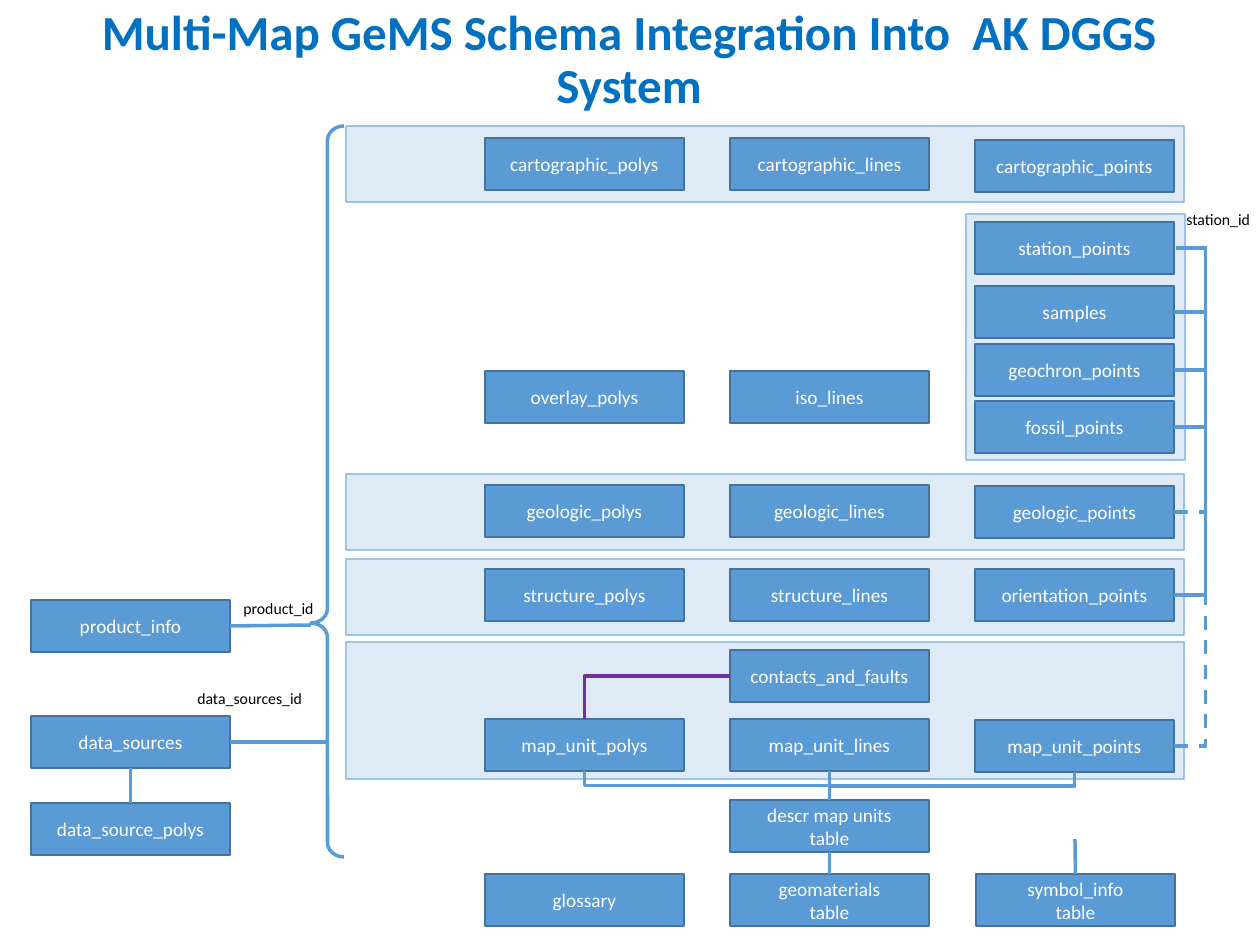
from dataclasses import dataclass

from lxml.etree import SubElement
from pptx import Presentation
from pptx.dml.color import RGBColor
from pptx.enum.dml import MSO_LINE
from pptx.enum.shapes import MSO_CONNECTOR, MSO_SHAPE
from pptx.enum.text import MSO_ANCHOR, MSO_AUTO_SIZE, PP_ALIGN
from pptx.oxml.ns import qn
from pptx.util import Emu, Pt


@dataclass(frozen=True)
class Theme:
    font: str = "Calibri"
    title: str = "0070C0"
    box: str = "5B9BD5"
    box_edge: str = "43739E"
    panel: str = "DEEBF7"
    panel_edge: str = "9DC3E6"
    link: str = "5B9BD5"
    fault: str = "7030A0"
    light: str = "FFFFFF"
    dark: str = "000000"
    title_size: int = 28
    box_size: int = 11
    label_size: int = 9
    edge_width: int = 1
    link_width: int = 2


@dataclass(frozen=True)
class Rect:
    x: int
    y: int
    w: int
    h: int


@dataclass(frozen=True)
class Table:
    name: str
    x: int
    y: int


@dataclass(frozen=True)
class Label:
    text: str
    area: Rect


THEME = Theme()
SLIDE_W, SLIDE_H = 1260, 945
BOX_W, BOX_H = 199, 52
LEFT, POLYS, LINES, POINTS = 31, 485, 730, 975
BUS_X = 1206
BUS_END_X = POINTS + BOX_W + 2

PANELS = [
    Rect(966, 214, 219, 246),
    *(Rect(346, y, 838, h) for y, h in ((126, 76), (474, 76), (559, 76), (642, 137))),
]

TABLES = [
    Table("cartographic_polys", POLYS, 138),
    Table("cartographic_lines", LINES, 138),
    Table("cartographic_points", POINTS, 140),
    Table("station_points", POINTS, 222),
    Table("samples", POINTS, 286),
    Table("geochron_points", POINTS, 344),
    Table("fossil_points", POINTS, 401),
    Table("overlay_polys", POLYS, 371),
    Table("iso_lines", LINES, 371),
    Table("geologic_polys", POLYS, 485),
    Table("geologic_lines", LINES, 485),
    Table("geologic_points", POINTS, 486),
    Table("structure_polys", POLYS, 569),
    Table("structure_lines", LINES, 569),
    Table("orientation_points", POINTS, 569),
    Table("contacts_and_faults", LINES, 650),
    Table("map_unit_polys", POLYS, 719),
    Table("map_unit_lines", LINES, 719),
    Table("map_unit_points", POINTS, 720),
    Table("descr map units\ntable", LINES, 800),
    Table("glossary", POLYS, 874),
    Table("geomaterials\ntable", LINES, 874),
    Table("symbol_info\ntable", POINTS + 1, 874),
    Table("product_info", LEFT, 600),
    Table("data_sources", LEFT, 716),
    Table("data_source_polys", LEFT, 803),
]

LABELS = [
    Label("product_id", Rect(231, 593, 96, 32)),
    Label("station_id", Rect(1174, 204, 96, 32)),
    Label("data_sources_id", Rect(185, 683, 141, 32)),
]


def px(n: float) -> Emu:
    return Emu(round(n * 914400 / 126))


def rgb(color: str) -> RGBColor:
    return RGBColor.from_string(color)


def style_text(tf, size: int, color: str, align=None, bold: bool = False) -> None:
    for p in tf.paragraphs:
        p.alignment = align
        for r in p.runs:
            r.font.name = THEME.font
            r.font.size = Pt(size)
            r.font.bold = bold
            r.font.color.rgb = rgb(color)


def place(sp, area: Rect) -> None:
    sp.left, sp.top, sp.width, sp.height = map(px, (area.x, area.y, area.w, area.h))


def add_rect(s, area: Rect, fill: str, edge: str):
    sp = s.shapes.add_shape(MSO_SHAPE.RECTANGLE, px(area.x), px(area.y), px(area.w), px(area.h))
    sp.shadow.inherit = False
    sp.fill.solid()
    sp.fill.fore_color.rgb = rgb(fill)
    sp.line.color.rgb = rgb(edge)
    sp.line.width = Pt(THEME.edge_width)
    return sp


def add_table_box(s, table: Table):
    sp = add_rect(s, Rect(table.x, table.y, BOX_W, BOX_H), THEME.box, THEME.box_edge)
    tf = sp.text_frame
    tf.text = table.name
    tf.vertical_anchor = MSO_ANCHOR.MIDDLE
    style_text(tf, THEME.box_size, THEME.light, PP_ALIGN.CENTER)
    return sp


def add_label(s, label: Label) -> None:
    a = label.area
    sp = s.shapes.add_textbox(px(a.x), px(a.y), px(a.w), px(a.h))
    tf = sp.text_frame
    tf.word_wrap = True
    tf.auto_size = MSO_AUTO_SIZE.SHAPE_TO_FIT_TEXT
    tf.text = label.text
    style_text(tf, THEME.label_size, THEME.dark)


def add_link(s, x1: float, y1: float, x2: float, y2: float,
             kind=MSO_CONNECTOR.STRAIGHT, color: str = THEME.link):
    c = s.shapes.add_connector(kind, px(x1), px(y1), px(x2), px(y2))
    c.line.color.rgb = rgb(color)
    c.line.width = Pt(THEME.link_width)
    SubElement(c._element.spPr, qn("a:effectLst"))
    return c


def join(s, a, a_site: int, b, b_site: int) -> None:
    c = add_link(s, 0, 0, 0, 0)
    c.begin_connect(a, a_site)
    c.end_connect(b, b_site)


def add_station_link(s, table: Table, station: Table, dashed: bool) -> None:
    x = table.x + BOX_W
    c = add_link(s, x, table.y + BOX_H / 2, BUS_END_X, station.y + BOX_H / 2, MSO_CONNECTOR.ELBOW)
    av = c._element.spPr.find(qn("a:prstGeom")).get_or_add_avLst()
    bend = round((BUS_X - x) / (BUS_END_X - x) * 100000)
    SubElement(av, qn("a:gd"), name="adj1", fmla=f"val {bend}")
    if dashed:
        c.line.dash_style = MSO_LINE.DASH


def add_drop_link(s, top: Table, bottom: Table) -> None:
    x1, y1 = top.x + BOX_W / 2, top.y + BOX_H
    x2, y2 = bottom.x + BOX_W / 2, bottom.y
    cx, cy = (x1 + x2) / 2, (y1 + y2) / 2
    half_w, half_h = (y2 - y1) / 2, (x1 - x2) / 2
    c = add_link(s, cx - half_w, cy - half_h, cx + half_w, cy + half_h, MSO_CONNECTOR.ELBOW)
    c._element.spPr.find(qn("a:xfrm")).set("rot", str(90 * 60000))


def add_brace(s) -> None:
    sp = s.shapes.add_shape(MSO_SHAPE.LEFT_BRACE, px(311), px(126), px(33), px(731))
    sp.shadow.inherit = False
    sp.adjustments[0], sp.adjustments[1] = 0.44, 0.68
    sp.fill.background()
    sp.line.color.rgb = rgb(THEME.link)
    sp.line.width = Pt(THEME.link_width)


def add_title(s) -> None:
    sp = s.shapes.title
    place(sp, Rect(40, 28, 1178, 67))
    tf = sp.text_frame
    tf.text = "Multi-Map GeMS Schema Integration Into  AK DGGS System"
    tf.word_wrap = True
    tf.auto_size = MSO_AUTO_SIZE.NONE
    tf.vertical_anchor = MSO_ANCHOR.MIDDLE
    tf.paragraphs[0].line_spacing = 0.9
    style_text(tf, THEME.title_size, THEME.title, PP_ALIGN.CENTER, bold=True)


def main() -> None:
    prs = Presentation()
    prs.slide_width, prs.slide_height = px(SLIDE_W), px(SLIDE_H)
    s = prs.slides.add_slide(prs.slide_layouts[5])
    add_title(s)
    for area in PANELS:
        add_rect(s, area, THEME.panel, THEME.panel_edge)
    tables = {t.name.split("\n")[0]: t for t in TABLES}
    boxes = {name: add_table_box(s, t) for name, t in tables.items()}

    for name in ("geologic_points", "map_unit_points"):
        add_station_link(s, tables[name], tables["station_points"], True)
    for name in ("orientation_points", "samples", "geochron_points", "fossil_points"):
        add_station_link(s, tables[name], tables["station_points"], False)
    for name in ("map_unit_polys", "map_unit_points"):
        add_drop_link(s, tables[name], tables["descr map units"])
    for upper, lower in (("map_unit_lines", "descr map units"),
                         ("descr map units", "geomaterials"),
                         ("data_sources", "data_source_polys")):
        join(s, boxes[upper], 2, boxes[lower], 0)
    for name, x, y, site in (("product_info", 311, 625, 3), ("data_sources", 329, 742, 3),
                             ("symbol_info", 1075, 839, 0)):
        add_link(s, x, y, x, y).begin_connect(boxes[name], site)

    c = add_link(s, LINES, 676, POLYS + BOX_W / 2, 719, MSO_CONNECTOR.ELBOW, THEME.fault)
    c._element.spPr.find(qn("a:prstGeom")).set("prst", "bentConnector2")
    add_brace(s)
    for label in LABELS:
        add_label(s, label)
    prs.save("out.pptx")


if __name__ == "__main__":
    main()
